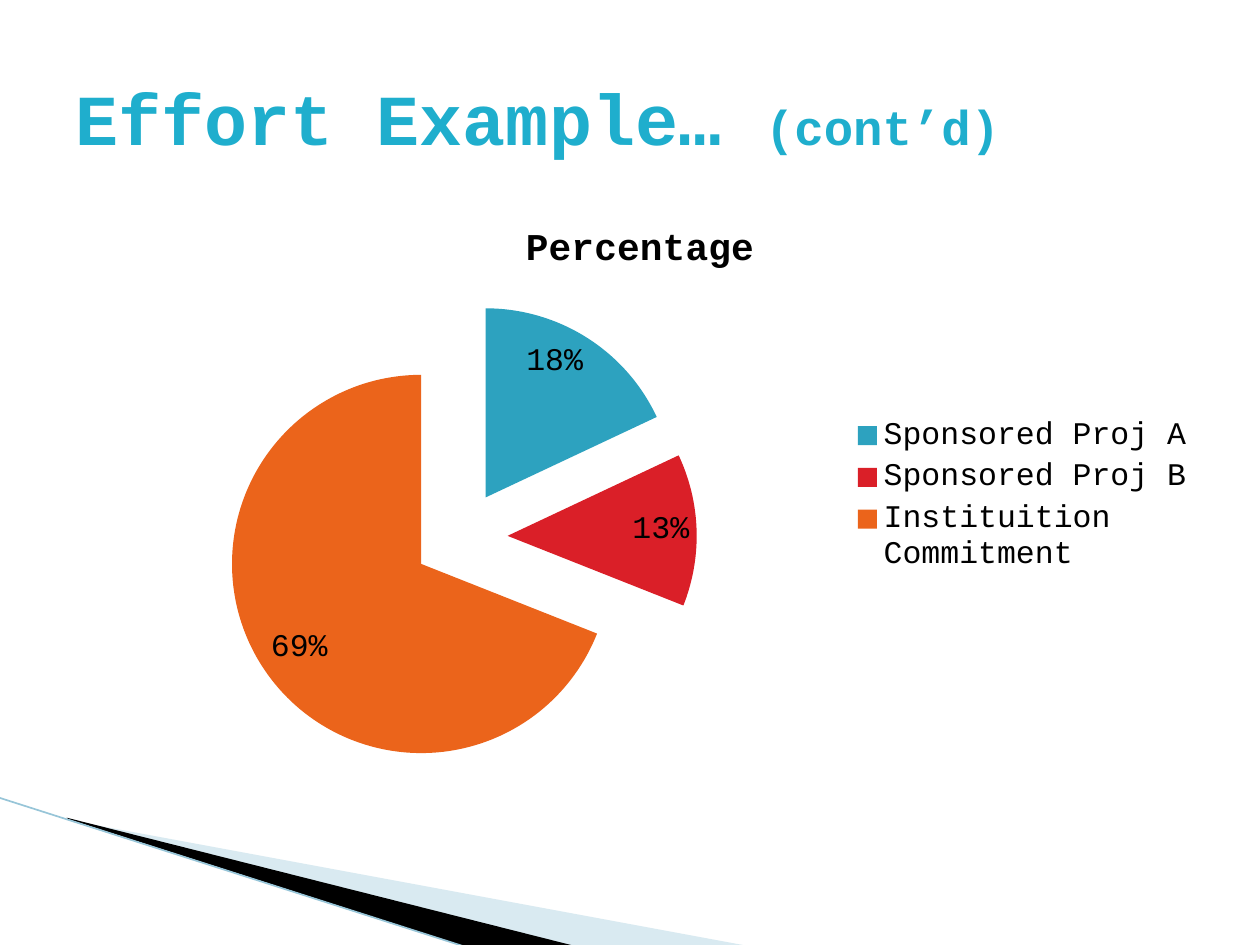
"""Build the effort example slide with an exploded pie chart."""
from lxml import etree
from pptx import Presentation
from pptx.chart.data import CategoryChartData
from pptx.dml.color import RGBColor
from pptx.enum import chart as ch, text
from pptx.oxml import ns
from pptx.util import Inches, Pt


def color(value):
    return RGBColor.from_string(value)


def style(font, **values):
    font.color.rgb = color(values.pop("color"))
    for name, value in values.items():
        setattr(font, name, value)


FACE = "Courier New"
deck = Presentation()
deck.slide_width, deck.slide_height = Inches(10), Inches(7.5)
slide = deck.slides.add_slide(deck.slide_layouts[5])

wedges = [
    ("A0CBDC", 40, [(0.55, 6.51), (5.95, 7.51), (4.56, 7.51), (0.55, 6.5)]),
    ("000000", 100, [(0.53, 6.49), (4.57, 7.51), (3.72, 7.52), (0.54, 6.5)]),
]
for fill, opacity, points in wedges:
    start, *rest = [(Inches(x), Inches(y)) for x, y in points]
    builder = slide.shapes.build_freeform(*start)
    builder.add_line_segments(rest)
    wedge = builder.convert_to_shape()
    wedge.shadow.inherit = False
    wedge.fill.solid()
    wedge.fill.fore_color.rgb = color(fill)
    wedge.line.fill.background()
    if opacity < 100:
        tint = wedge.fill._xPr.find(".//" + ns.qn("a:srgbClr"))
        etree.SubElement(tint, ns.qn("a:alpha"), val=str(opacity * 1000))

edge = slide.shapes.add_connector(1, Inches(-0.01), Inches(6.33), Inches(3.71), Inches(7.52))
edge.line.color.rgb = color("97C5D8")
edge.line.width = Pt(0.95)
etree.SubElement(edge._element.spPr, ns.qn("a:effectLst"))

efforts = [
    ("Sponsored Proj A", 0.18, "2DA2BF"),
    ("Sponsored Proj B", 0.13, "DA1F28"),
    ("Instituition Commitment", 0.69, "EB641B"),
]
data = CategoryChartData(number_format="0%")
data.categories = [name for name, share, fill in efforts]
data.add_series("Percentage", [share for name, share, fill in efforts])
pie = slide.shapes.add_chart(
    ch.XL_CHART_TYPE.PIE, Inches(0.58), Inches(1.58), Inches(9), Inches(4.7), data
).chart
style(pie.font, name=FACE, size=Pt(18), color="000000")

pie.has_title = True
pie.chart_title.text_frame.text = "Percentage"
pie.chart_title.include_in_layout = False
heading = pie.chart_title.text_frame.paragraphs[0].runs[0]
style(heading.font, name=FACE, size=Pt(21.6), bold=True, color="000000")

pie.has_legend = True
pie.legend.position = ch.XL_LEGEND_POSITION.RIGHT
pie.legend.include_in_layout = False

plot = pie.plots[0]
plot.vary_by_categories = True
plot.has_data_labels = True
labels = {
    "show_value": True,
    "show_percentage": False,
    "number_format": "0%",
    "number_format_is_linked": False,
    "position": ch.XL_LABEL_POSITION.INSIDE_END,
}
for name, value in labels.items():
    setattr(plot.data_labels, name, value)

shares = plot.series[0]
for index, (name, share, fill) in enumerate(efforts):
    piece = shares.points[index].format.fill
    piece.solid()
    piece.fore_color.rgb = color(fill)
explosion = etree.Element(ns.qn("c:explosion"), val="25")
shares._element.find(ns.qn("c:dPt")).addprevious(explosion)

title = slide.shapes.title
title_box = {"left": 0.5, "top": 0.3, "width": 9, "height": 1.25}
for name, value in title_box.items():
    setattr(title, name, Inches(value))
title.text_frame.vertical_anchor = text.MSO_ANCHOR.MIDDLE
line = title.text_frame.paragraphs[0]
line.alignment = text.PP_ALIGN.LEFT
for words, size in [("Effort Example… ", 41), ("(cont’d)", 28)]:
    run = line.add_run()
    run.text = words
    style(run.font, name=FACE, size=Pt(size), bold=True, color="1FAECD")

deck.save("out.pptx")
